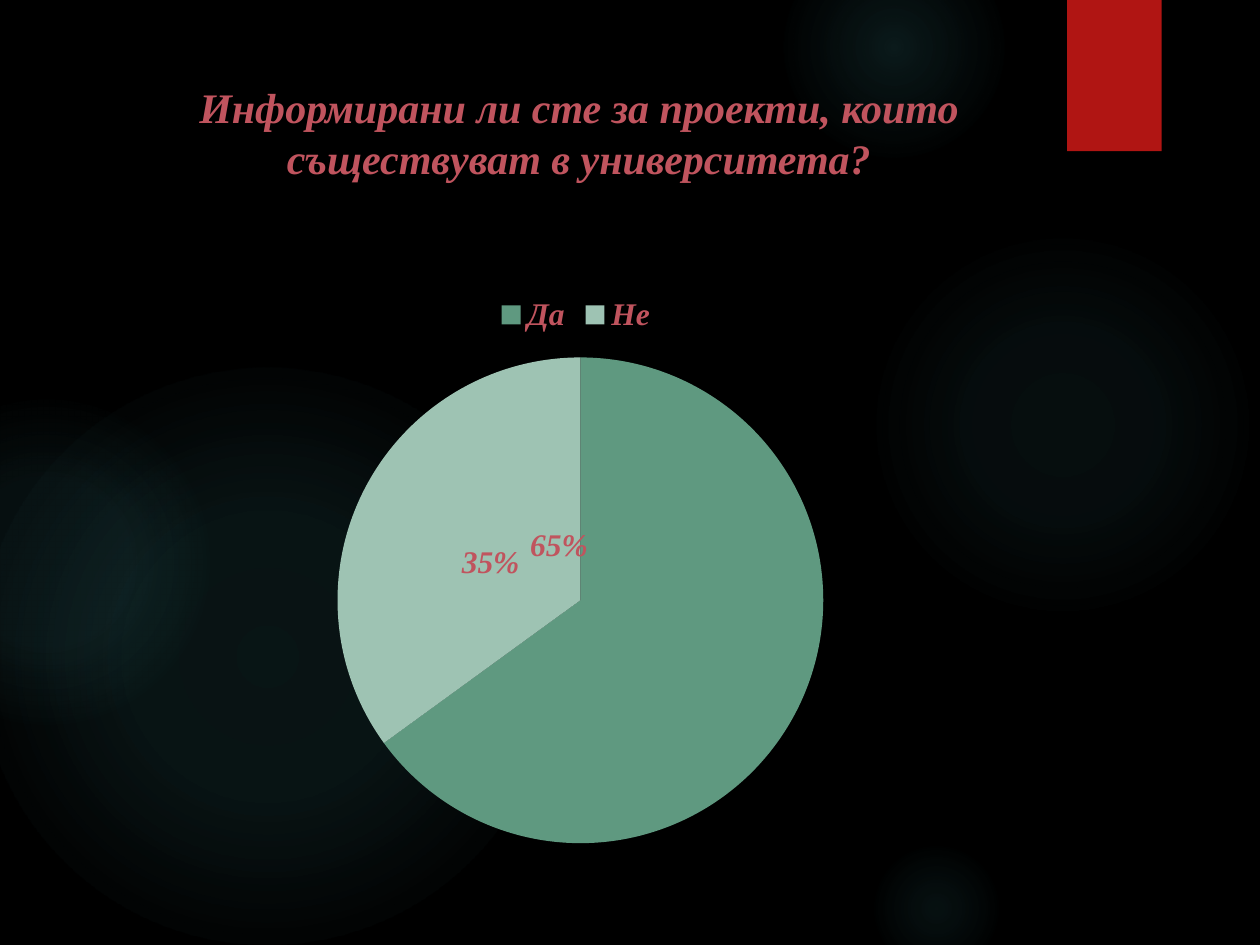
from typing import NamedTuple

from lxml import etree
from pptx import Presentation
from pptx.chart.data import CategoryChartData
from pptx.dml.color import RGBColor
from pptx.enum import chart as charts, shapes, text
from pptx.oxml import parse_xml
from pptx.oxml.ns import nsdecls, qn
from pptx.util import Inches, Pt

COLORS = {
    "background": "000000",
    "glow": "50B9C1",
    "ribbon": "B01513",
    "text": "C0545E",
}
FONT = "Times New Roman"


class Glow(NamedTuple):
    left: float
    top: float
    size: float
    stops: tuple  # (position %, opacity %)


class Answer(NamedTuple):
    name: str
    percent: int
    color: str
    label_offset: tuple  # shift from the slice centre, share of the chart


GLOWS = (
    Glow(6.89, 1.83, 3.08, ((0, 7), (36, 6), (69, 0))),
    Glow(6.22, -0.5, 1.75, ((0, 14), (36, 7), (73, 0))),
    Glow(6.89, 6.67, 1.08, ((0, 9), (36, 5), (66, 0))),
    Glow(-0.17, 2.92, 4.58, ((0, 11), (36, 10), (75, 0))),
    Glow(-0.92, 3.17, 2.58, ((0, 8), (36, 8), (72, 0))),
)
ANSWERS = (
    Answer("Да", 65, "5F9980", (-0.14, -0.19)),
    Answer("Не", 35, "9EC3B3", (0.02, 0.03)),
)


def rgb(name: str) -> RGBColor:
    return RGBColor.from_string(COLORS[name])


def style_font(font, size: int) -> None:
    font.name = FONT
    font.size = Pt(size)
    font.bold = font.italic = True
    font.color.rgb = rgb("text")


def add_plain_shape(slide, kind, left: float, top: float, width: float, height: float):
    shape = slide.shapes.add_shape(
        kind, Inches(left), Inches(top), Inches(width), Inches(height))
    shape.shadow.inherit = False
    shape.line.fill.background()
    return shape


def add_glow(slide, glow: Glow) -> None:
    """Add a circle whose radial gradient fades to transparent."""
    shape = add_plain_shape(
        slide, shapes.MSO_SHAPE.OVAL, glow.left, glow.top, glow.size, glow.size)
    stops = "".join(
        f'<a:gs pos="{position * 1000}"><a:srgbClr val="{COLORS["glow"]}">'
        f'<a:alpha val="{opacity * 1000}"/></a:srgbClr></a:gs>'
        for position, opacity in glow.stops)
    gradient = parse_xml(
        f'<a:gradFill {nsdecls("a")} rotWithShape="1"><a:gsLst>{stops}</a:gsLst>'
        '<a:path path="circle"><a:fillToRect l="50000" t="50000" r="50000" b="50000"/>'
        '</a:path></a:gradFill>')
    shape._element.spPr.find(qn("a:prstGeom")).addnext(gradient)


def make_layout(**values):
    """Build a manual chart layout from its child values."""
    layout = etree.Element(qn("c:layout"))
    manual = etree.SubElement(layout, qn("c:manualLayout"))
    for tag, value in values.items():
        etree.SubElement(manual, qn(f"c:{tag}")).set("val", str(value))
    return layout


def format_title(slide, wording: str) -> None:
    title = slide.shapes.title
    title.left, title.top = Inches(0.51), Inches(0.6)
    title.width, title.height = Inches(8.17), Inches(0.85)
    frame = title.text_frame
    frame.text = wording
    frame.word_wrap = True
    frame.auto_size = text.MSO_AUTO_SIZE.NONE
    frame.vertical_anchor = text.MSO_ANCHOR.TOP
    frame.margin_left = frame.margin_right = Inches(0.3)
    paragraph = frame.paragraphs[0]
    paragraph.alignment = text.PP_ALIGN.CENTER
    style_font(paragraph.runs[0].font, 24)
    slide.shapes._spTree.append(title._element)  # in front of the glows


def format_slice(series, index: int, answer: Answer) -> None:
    point = series.points[index]
    point.format.fill.solid()
    point.format.fill.fore_color.rgb = RGBColor.from_string(answer.color)
    point.format.line.fill.background()
    label = point.data_label
    style_font(label.font, 18)
    label.position = charts.XL_LABEL_POSITION.CENTER
    element = series._element.findall(f".//{qn('c:dLbl')}")[index]
    element.find(qn("c:showVal")).set("val", "0")
    element.find(qn("c:showPercent")).set("val", "1")
    x, y = answer.label_offset
    element.find(qn("c:idx")).addnext(make_layout(x=x, y=y))


def add_answer_pie(slide) -> None:
    data = CategoryChartData()
    data.categories = [answer.name for answer in ANSWERS]
    data.add_series("Series 1", [answer.percent for answer in ANSWERS])
    chart = slide.shapes.add_chart(
        charts.XL_CHART_TYPE.PIE, Inches(0.9), Inches(2.24),
        Inches(7.34), Inches(4.59), data).chart
    chart.has_title = False
    style_font(chart.font, 18)

    chart.has_legend = True
    chart.legend.position = charts.XL_LEGEND_POSITION.TOP
    chart.legend.include_in_layout = False
    style_font(chart.legend.font, 18)

    series = chart.plots[0].series[0]
    labels = series.data_labels
    labels.show_percentage = True
    labels.show_value = False
    labels.number_format = "0%"
    labels.number_format_is_linked = False
    style_font(labels.font, 18)
    for index, answer in enumerate(ANSWERS):
        format_slice(series, index, answer)

    plot_area = chart._chartSpace.chart.plotArea
    for old in plot_area.findall(qn("c:layout")):
        plot_area.remove(old)
    plot_area.insert(0, make_layout(
        layoutTarget="inner", xMode="edge", yMode="edge",
        x=0.24, y=0.13, w=0.53, h=0.84))


def main() -> None:
    presentation = Presentation()
    presentation.slide_width, presentation.slide_height = Inches(10), Inches(7.5)
    slide = presentation.slides.add_slide(presentation.slide_layouts[5])
    slide.background.fill.solid()
    slide.background.fill.fore_color.rgb = rgb("background")

    for glow in GLOWS:
        add_glow(slide, glow)
    ribbon = add_plain_shape(slide, shapes.MSO_SHAPE.RECTANGLE, 8.47, 0, 0.75, 1.2)
    ribbon.fill.solid()
    ribbon.fill.fore_color.rgb = rgb("ribbon")
    format_title(slide, "Информирани ли сте за проекти, които съществуват в университета?")
    add_answer_pie(slide)
    presentation.save("out.pptx")


if __name__ == "__main__":
    main()
